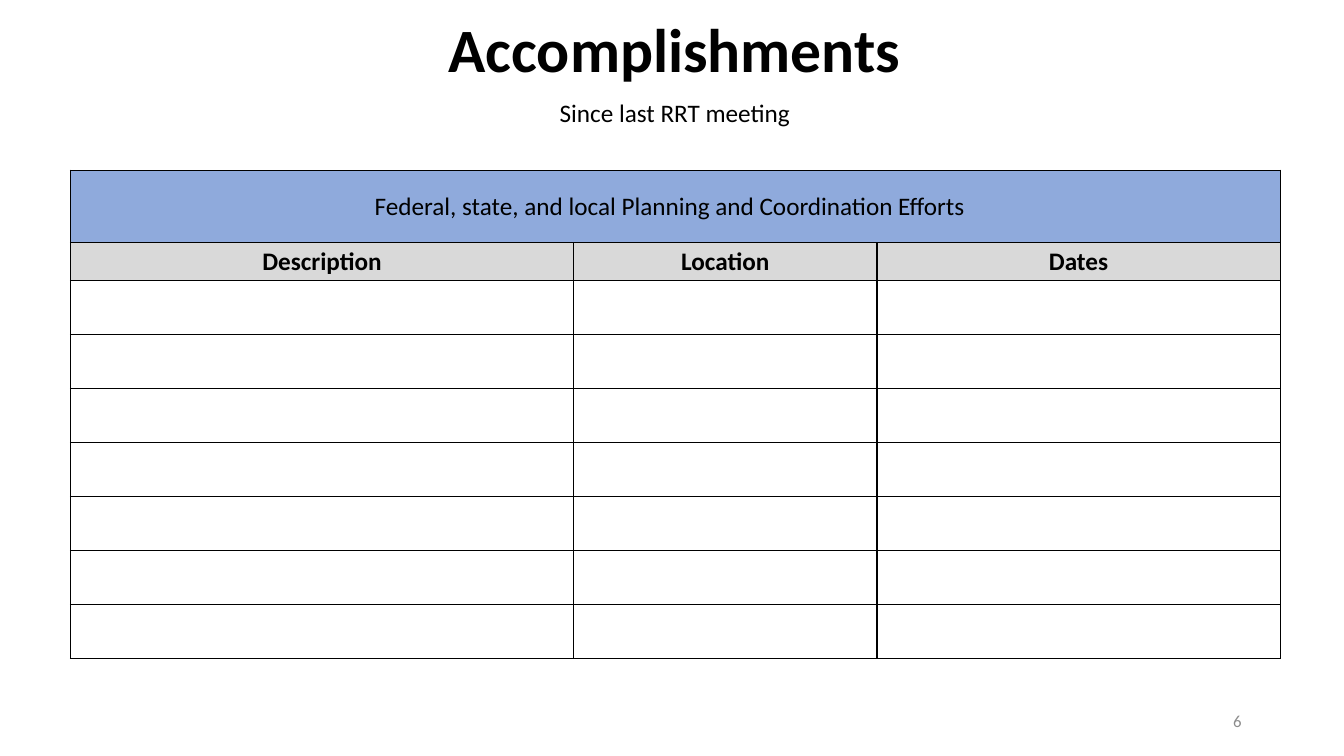
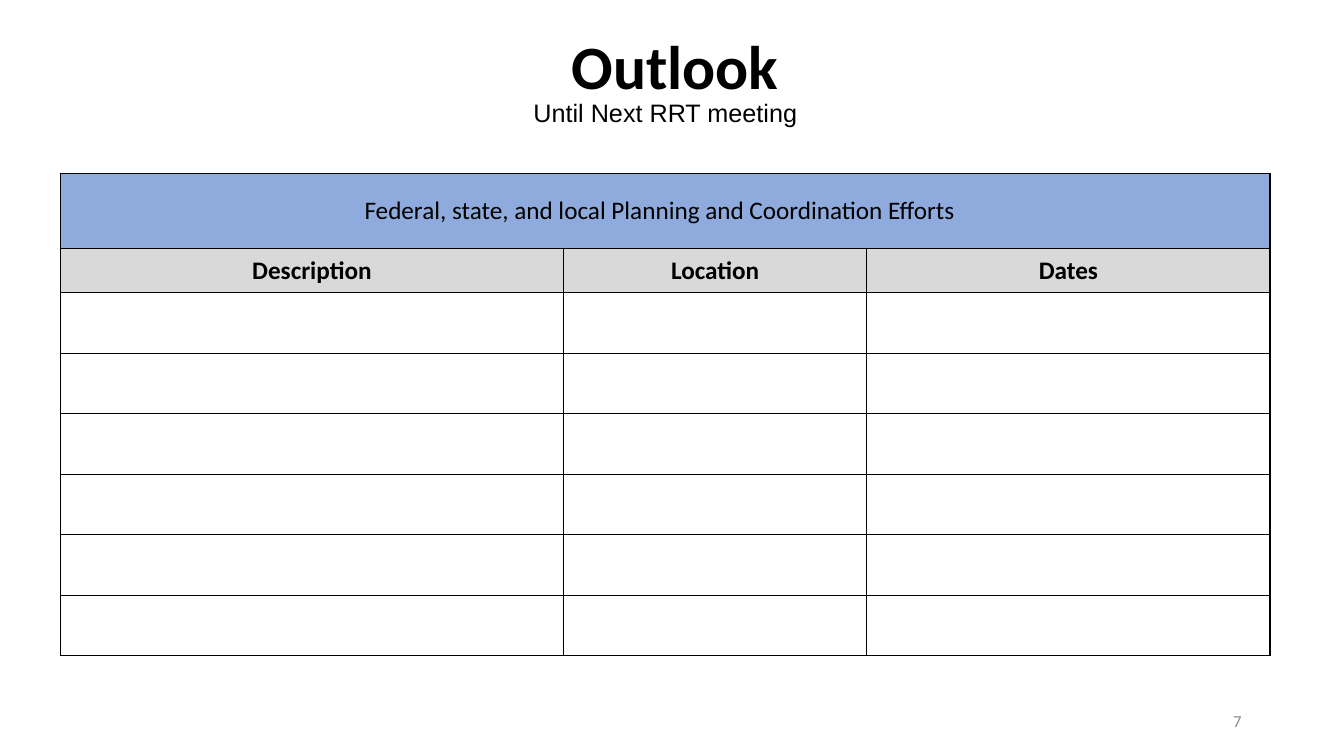
from dataclasses import dataclass

from lxml import etree
from pptx import Presentation
from pptx.dml.color import RGBColor
from pptx.enum.shapes import MSO_SHAPE
from pptx.enum.text import MSO_ANCHOR, PP_ALIGN
from pptx.oxml.ns import qn
from pptx.util import Pt

RECTANGLE = MSO_SHAPE.RECTANGLE
TOP, MIDDLE = MSO_ANCHOR.TOP, MSO_ANCHOR.MIDDLE
CENTER, RIGHT = PP_ALIGN.CENTER, PP_ALIGN.RIGHT

SLIDE_WIDTH, SLIDE_HEIGHT = 960, 540
BLANK_LAYOUT = 6
COLUMN_WIDTHS = (359.3, 216.7, 288)
BAND_TEXT = "Federal, state, and local Planning and Coordination Efforts"
HEADINGS = ("Description", "Location", "Dates")


@dataclass(frozen=True)
class Theme:
    ink: str = "000000"
    paper: str = "FFFFFF"
    band: str = "8FAADC"
    heading: str = "D9D9D9"
    muted: str = "8C8C8C"
    font: str = "Calibri"
    title_size: float = 44
    body_size: float = 18
    number_size: float = 12
    border: float = 1
    cell_inset_x: float = 5
    cell_inset_y: float = 2.6
    band_inset_right: float = 13


class Deck:
    def __init__(self, theme):
        self.theme = theme
        self.presentation = Presentation()
        self.presentation.slide_width = Pt(SLIDE_WIDTH)
        self.presentation.slide_height = Pt(SLIDE_HEIGHT)
        self.slide = None

    def start_slide(self):
        layout = self.presentation.slide_layouts[BLANK_LAYOUT]
        self.slide = self.presentation.slides.add_slide(layout)

    def set_text(self, frame, text, size, align=CENTER, color=None, bold=False, font=None):
        """Fill a text frame with one styled paragraph."""
        paragraph = frame.paragraphs[0]
        paragraph.text = text
        paragraph.alignment = align
        paragraph.font.name = font or self.theme.font
        paragraph.font.size = Pt(size)
        paragraph.font.bold = bold
        paragraph.font.color.rgb = RGBColor.from_string(color or self.theme.ink)

    def text(self, box, text, size, **style):
        frame = self.slide.shapes.add_textbox(*map(Pt, box)).text_frame
        frame.word_wrap = True
        frame.vertical_anchor = MIDDLE
        self.set_text(frame, text, size, **style)

    def title(self, box, text):
        self.text(box, text, self.theme.title_size, bold=True)

    def subtitle(self, box, text, font=None):
        plate = self.slide.shapes.add_shape(RECTANGLE, *map(Pt, box))
        plate.shadow.inherit = False
        paper = RGBColor.from_string(self.theme.paper)
        plate.fill.solid()
        plate.fill.fore_color.rgb = paper
        plate.line.color.rgb = paper
        plate.line.width = Pt(self.theme.border)
        plate.text_frame.word_wrap = False
        plate.text_frame.vertical_anchor = TOP
        self.set_text(plate.text_frame, text, self.theme.body_size, font=font)

    def page_number(self, number):
        self.text((678, 500.4, 216, 28.8), str(number), self.theme.number_size,
                  align=RIGHT, color=self.theme.muted)

    def style_cell(self, cell, color):
        """Give a cell its four borders, fill and insets."""
        properties = cell._tc.get_or_add_tcPr()
        for side in ("a:lnL", "a:lnR", "a:lnT", "a:lnB"):
            line = etree.SubElement(properties, qn(side), w=str(Pt(self.theme.border)))
            fill = etree.SubElement(line, qn("a:solidFill"))
            etree.SubElement(fill, qn("a:srgbClr"), val=self.theme.ink)
        cell.fill.solid()
        cell.fill.fore_color.rgb = RGBColor.from_string(color)
        cell.vertical_anchor = MIDDLE
        cell.margin_left = cell.margin_right = Pt(self.theme.cell_inset_x)
        cell.margin_top = cell.margin_bottom = Pt(self.theme.cell_inset_y)

    def efforts_table(self, left, top, band_height, heading_height, entry_height, entries):
        theme = self.theme
        heights = [band_height, heading_height] + [entry_height] * entries
        table = self.slide.shapes.add_table(
            len(heights), len(COLUMN_WIDTHS), Pt(left), Pt(top),
            Pt(sum(COLUMN_WIDTHS)), Pt(sum(heights))).table
        table.first_row = table.horz_banding = False
        for column, width in zip(table.columns, COLUMN_WIDTHS):
            column.width = Pt(width)
        row_colors = [theme.band, theme.heading] + [theme.paper] * entries
        for row, height, color in zip(table.rows, heights, row_colors):
            row.height = Pt(height)
            for cell in row.cells:
                self.style_cell(cell, color)

        band = table.cell(0, 0)
        band.merge(table.cell(0, len(COLUMN_WIDTHS) - 1))
        band.margin_right = Pt(theme.band_inset_right)
        self.set_text(band.text_frame, BAND_TEXT, theme.body_size)
        for index, heading in enumerate(HEADINGS):
            self.set_text(table.cell(1, index).text_frame, heading, theme.body_size, bold=True)


def main():
    deck = Deck(Theme())

    deck.start_slide()
    deck.page_number(6)
    deck.subtitle((391.7, 66.2, 180.7, 29), "Since last RRT meeting")
    deck.title((2, 2, 960, 65), "Accomplishments")
    deck.efforts_table(50.4, 121.6, band_height=51.8, heading_height=27.2,
                       entry_height=38.6, entries=7)

    deck.start_slide()
    deck.page_number(7)
    deck.efforts_table(43.2, 123.8, band_height=54, heading_height=31.4,
                       entry_height=43.2, entries=6)
    deck.title((50.4, 1.4, 864, 90), "Outlook")
    deck.subtitle((373, 66.2, 204.5, 29), "Until Next RRT meeting", font="Arial")

    deck.presentation.save("out.pptx")


if __name__ == "__main__":
    main()
